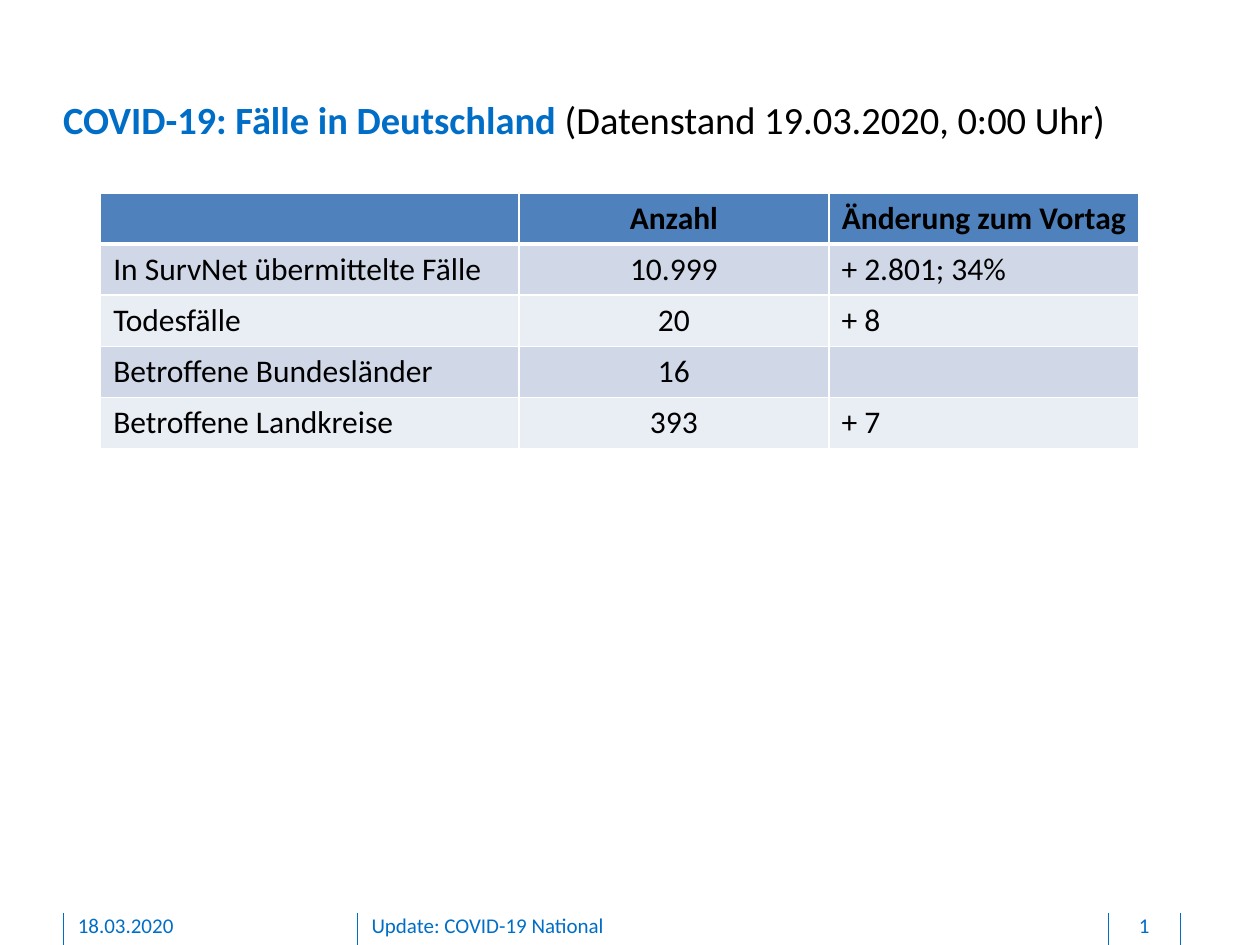
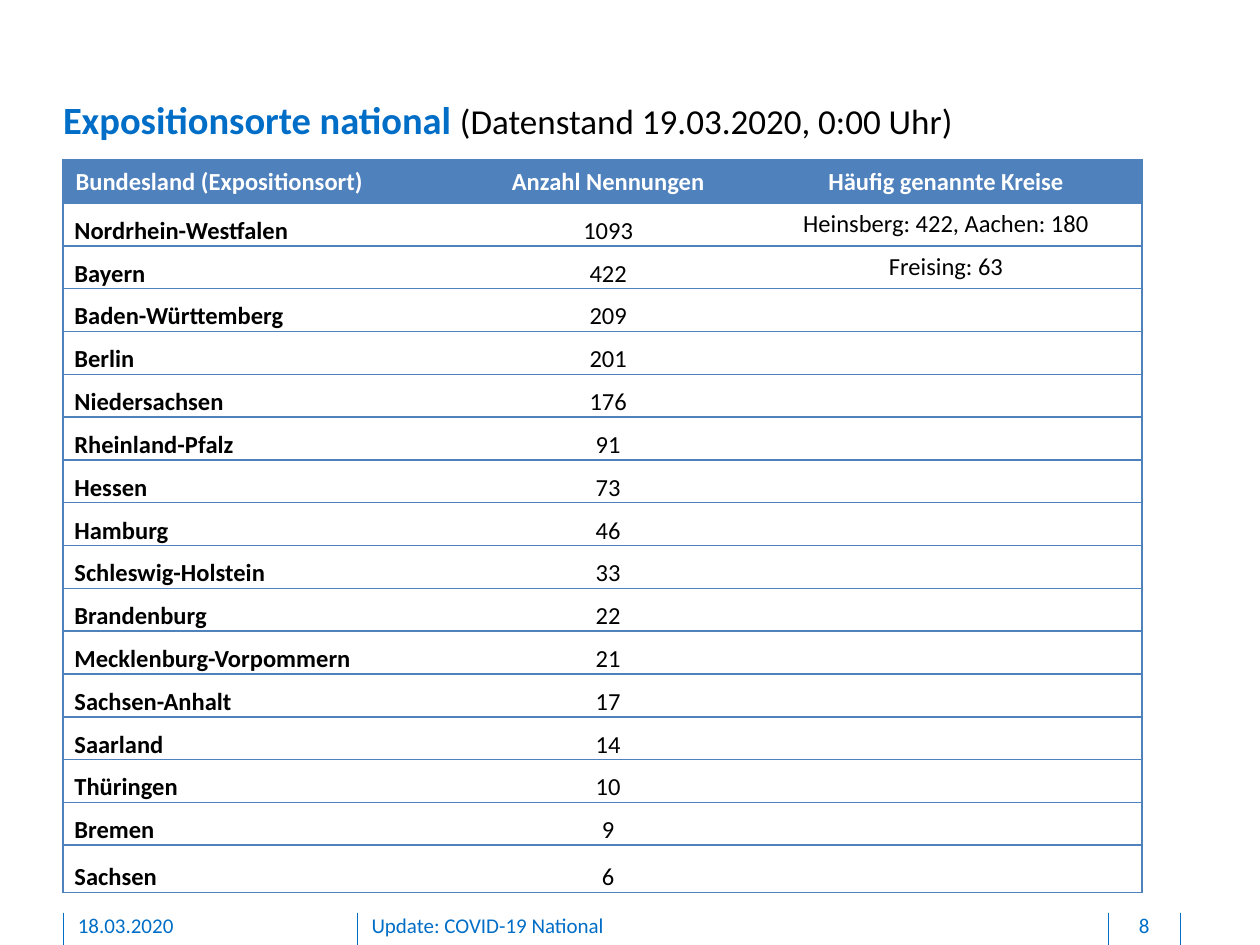
"""Build two slides on German COVID-19 cases and places of exposure."""
from lxml import etree
from pptx import Presentation
from pptx.dml.color import RGBColor
from pptx.enum.shapes import MSO_CONNECTOR
from pptx.enum.text import MSO_ANCHOR, PP_ALIGN
from pptx.oxml.ns import qn
from pptx.util import Cm, Pt

LEFT, MID = PP_ALIGN.LEFT, PP_ALIGN.CENTER
TOP, CENTRE, BOTTOM = MSO_ANCHOR.TOP, MSO_ANCHOR.MIDDLE, MSO_ANCHOR.BOTTOM
LINE = MSO_CONNECTOR.STRAIGHT
HUES = {"blue": "006EC7", "head": "4F81BD", "dark": "D0D8E8",
        "light": "E9EDF4", "white": "FFFFFF", "black": "000000"}
FACE = "Calibri"
STAND = "(Datenstand 19.03.2020, 0:00 Uhr)"

CASES = [
    ("", "Anzahl", "Änderung zum Vortag"),
    ("In SurvNet übermittelte Fälle", "10.999", "+ 2.801; 34%"),
    ("Todesfälle", "20", "+ 8"),
    ("Betroffene Bundesländer", "16", ""),
    ("Betroffene Landkreise", "393", "+ 7"),
]
PLACES = [
    ("Bundesland (Expositionsort)", "Anzahl Nennungen", "Häufig genannte Kreise"),
    ("Nordrhein-Westfalen", "1093", "Heinsberg: 422, Aachen: 180"),
    ("Bayern", "422", "Freising: 63"),
    ("Baden-Württemberg", "209", ""),
    ("Berlin", "201", ""),
    ("Niedersachsen", "176", ""),
    ("Rheinland-Pfalz", "91", ""),
    ("Hessen", "73", ""),
    ("Hamburg", "46", ""),
    ("Schleswig-Holstein", "33", ""),
    ("Brandenburg", "22", ""),
    ("Mecklenburg-Vorpommern", "21", ""),
    ("Sachsen-Anhalt", "17", ""),
    ("Saarland", "14", ""),
    ("Thüringen", "10", ""),
    ("Bremen", "9", ""),
    ("Sachsen", "6", ""),
]


class Deck:
    """Hold the shared style and the current slide."""

    def __init__(self):
        """Open an empty 4:3 deck."""
        self.prs = Presentation()
        self.prs.slide_width, self.prs.slide_height = Cm(25.4), Cm(19.05)
        self.slide = None

    def start(self, title, size, page):
        """Add a slide with its title and footer."""
        self.slide = self.prs.slides.add_slide(self.prs.slide_layouts[5])
        self.title(title, size)
        for x in (1.27, 7.21, 22.35, 23.8):
            self.rule(x, 18.4, 19.05)
        self.note("18.03.2020", 1.57, 5.16)
        self.note("Update: COVID-19 National", 7.49, 14.4)
        self.note(page, 22.38, 1.37, MID)

    def font(self, font, size, hue, bold=False):
        """Style one font."""
        font.name, font.size, font.bold = FACE, Pt(size), bold
        font.color.rgb = RGBColor.from_string(HUES[hue])

    def frame(self, shape, base=0):
        """Clear the insets of a text shape and return its first paragraph."""
        text = shape.text_frame
        text.word_wrap, text.vertical_anchor = True, TOP
        text.margin_left = text.margin_right = text.margin_top = 0
        text.margin_bottom = Cm(base)
        return text.paragraphs[0]

    def title(self, head, size):
        """Place the title with the data status after it."""
        shape = self.slide.shapes.title
        shape.left, shape.top = Cm(1.27), Cm(1.93)
        shape.width, shape.height = Cm(22.48), Cm(0.94)
        para = self.frame(shape)
        para.alignment = LEFT
        for text, points, hue in ((head + " ", 22, "blue"), (STAND, size, "black")):
            run = para.add_run()
            run.text = text
            self.font(run.font, points, hue, hue == "blue")

    def rule(self, x, top, end):
        """Draw an upright footer line."""
        line = self.slide.shapes.add_connector(LINE, Cm(x), Cm(top), Cm(x), Cm(end))
        line.line.width = Pt(0.5)
        line.line.color.rgb = RGBColor.from_string(HUES["blue"])
        etree.SubElement(line._element.spPr, qn("a:effectLst"))

    def note(self, text, x, width, align=LEFT):
        """Write a footer text."""
        box = self.slide.shapes.add_textbox(Cm(x), Cm(18.39), Cm(width), Cm(0.53))
        para = self.frame(box, 0.13)
        para.text, para.alignment = text, align
        self.font(para.font, 12, "blue")

    def grid(self, rows, x, y, widths, heights, style):
        """Add a table whose cells are styled by style(cell, row, col)."""
        shape = self.slide.shapes.add_table(
            len(rows), len(widths), Cm(x), Cm(y), Cm(sum(widths)), Cm(sum(heights)))
        table = shape.table
        table.first_row = table.horz_banding = False
        for col, width in zip(table.columns, widths):
            col.width = Cm(width)
        for row, height in zip(table.rows, heights):
            row.height = Cm(height)
        for r, texts in enumerate(rows):
            for c, text in enumerate(texts):
                cell = table.cell(r, c)
                cell.text = text
                style(cell, r, c)

    def cell(self, cell, size, hue, fill, bold, align, edge, sides):
        """Style a cell; sides maps L, R, T and B to widths in points."""
        para = cell.text_frame.paragraphs[0]
        para.alignment = align
        self.font(para.font, size, hue, bold)
        props = cell._tc.get_or_add_tcPr()
        for side in "LRTB":
            width = sides.get(side, 0)
            line = etree.SubElement(props, qn("a:ln" + side), w=str(Pt(width)))
            if width:
                paint = etree.SubElement(line, qn("a:solidFill"))
                etree.SubElement(paint, qn("a:srgbClr"), val=HUES[edge])
            else:
                etree.SubElement(line, qn("a:noFill"))
        cell.fill.solid()
        cell.fill.fore_color.rgb = RGBColor.from_string(HUES[fill])

    def case(self, cell, r, c):
        """Style a cell of the case table."""
        fill = "head" if r == 0 else "dark" if r % 2 else "light"
        align = MID if r == 0 or c == 1 else LEFT
        sides = {"L": 1, "R": 1, "T": 3 if r == 1 else 1, "B": 1 if r else 3}
        self.cell(cell, 18, "black", fill, r == 0, align, "white", sides)

    def place(self, cell, r, c):
        """Style a cell of the exposure table."""
        sides = {"T": 1, "B": 1, "L": int(c == 0), "R": int(c == 2)}
        hue, fill = ("black", "white") if r else ("white", "head")
        self.cell(cell, 14, hue, fill, r == 0 or c == 0, MID if c else LEFT,
                  "head", sides)
        cell.vertical_anchor = BOTTOM if r and c < 2 else CENTRE
        if r and (c < 2 or not cell.text):
            cell.margin_right = cell.margin_top = cell.margin_bottom = 0
            cell.margin_left = 0 if c else Cm(0.23)


def main():
    """Build and save both slides."""
    deck = Deck()
    deck.start("COVID-19: Fälle in Deutschland", 22, "1")
    deck.grid(CASES, 2.03, 3.89, (8.43, 6.25, 6.25), [1.03] * len(CASES), deck.case)
    deck.start("Expositionsorte national", 20, "8")
    last = 0.95
    step = (14.76 - last) / (len(PLACES) - 1)
    heights = [step] * (len(PLACES) - 1) + [last]
    deck.grid(PLACES, 1.27, 3.23, (8.13, 5.72, 7.9), heights, deck.place)
    deck.prs.save("out.pptx")


if __name__ == "__main__":
    main()
